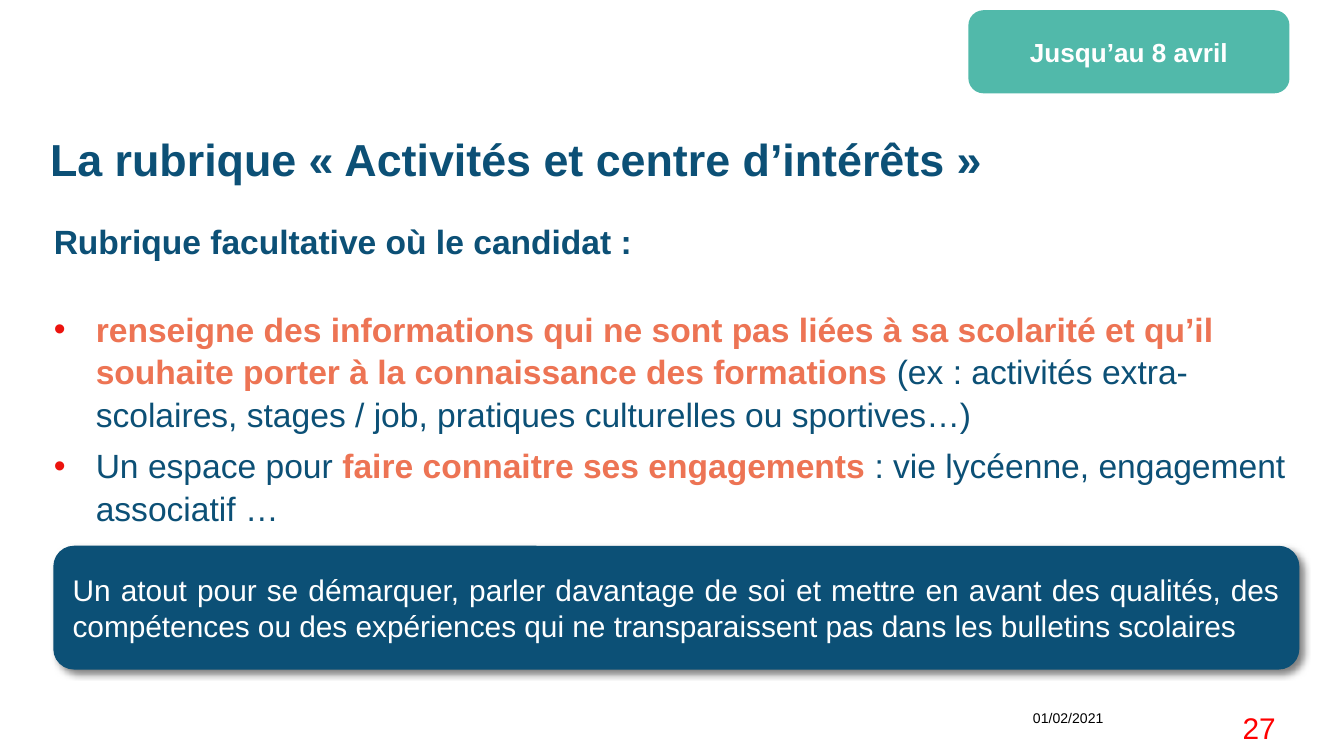
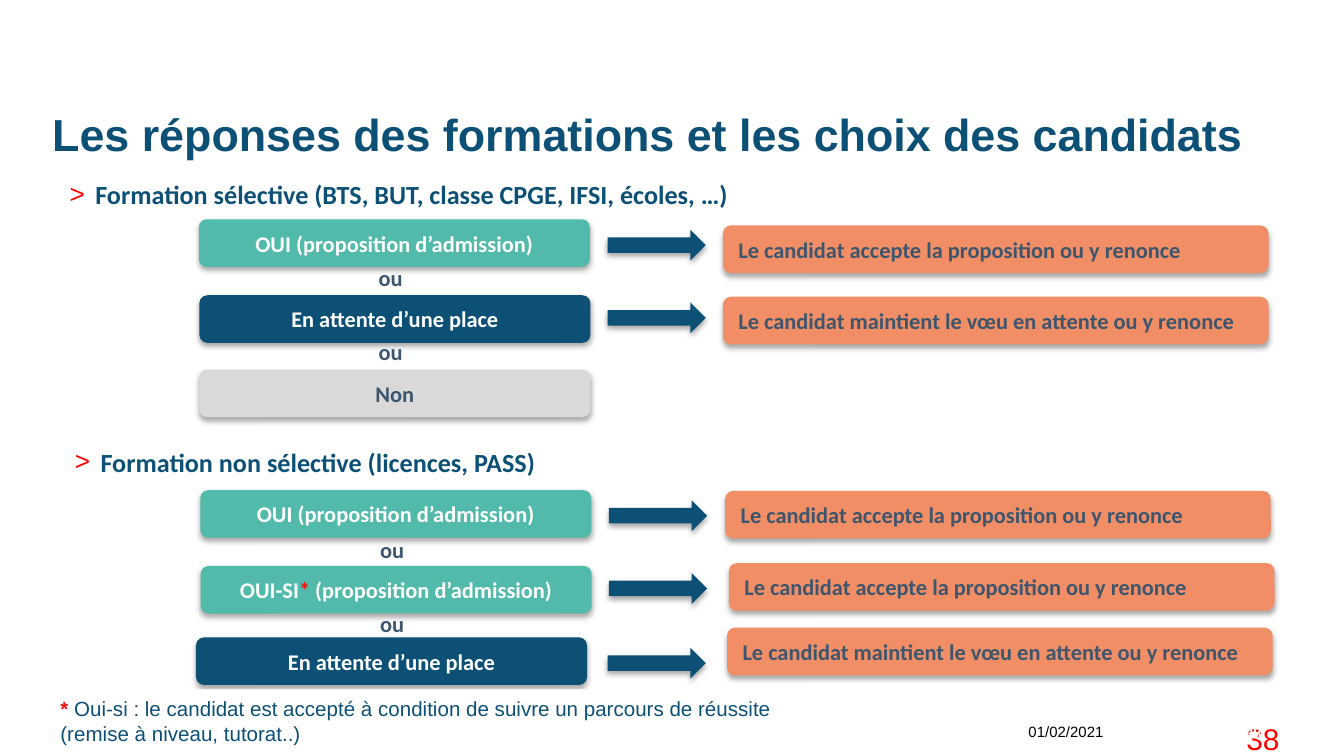
from dataclasses import dataclass, field
from typing import NamedTuple, Optional

from lxml.etree import SubElement
from pptx import Presentation
from pptx.dml.color import RGBColor
from pptx.enum.shapes import MSO_SHAPE
from pptx.enum.text import MSO_ANCHOR, PP_ALIGN
from pptx.oxml.ns import qn
from pptx.util import Pt

COLORS = {
    "navy": "0C5076", "teal": "51BAAA", "badge": "51B9AA", "coral": "ED7454",
    "orange": "F28E65", "grey": "D9D9D9", "slate": "3D566E", "star": "EC130E",
    "red": "FF0000", "black": "000000", "white": "FFFFFF",
}
ROUND, ARROW = MSO_SHAPE.ROUNDED_RECTANGLE, MSO_SHAPE.RIGHT_ARROW
LEFT, CENTER, RIGHT = PP_ALIGN.LEFT, PP_ALIGN.CENTER, PP_ALIGN.RIGHT
TOP, MIDDLE = MSO_ANCHOR.TOP, MSO_ANCHOR.MIDDLE
DATE = "01/02/2021"


class Box(NamedTuple):
    left: float
    top: float
    width: float
    height: float


class Shade(NamedTuple):
    alpha: int
    blur: float
    dist: float
    angle: int


class Run(NamedTuple):
    text: str
    color: str
    bold: bool = False


class Mark(NamedTuple):
    char: str
    color: str
    indent: float


@dataclass
class Para:
    runs: list[Run]
    align: PP_ALIGN = LEFT
    after: float = 0
    lines: float = 1.0
    mark: Optional[Mark] = None


@dataclass
class Part:
    box: Box
    paras: list[Para] = field(default_factory=list)
    size: float = 12
    face: str = "Arial"
    form: Optional[MSO_SHAPE] = None
    fill: str = "white"
    line: Optional[str] = None
    shade: Optional[Shade] = None
    anchor: MSO_ANCHOR = TOP
    inset: bool = True


CARD = Shade(50, 4, 3, 45)
SOFT = Shade(35, 3.1, 1.8, 90)


# Formatting helpers
def rgb(name: str) -> RGBColor:
    return RGBColor.from_string(COLORS[name])


def apply(target, values: dict) -> None:
    for key, value in values.items():
        setattr(target, key, value)


def cast(shape, shade: Shade) -> None:
    effects = shape._element.spPr.find(qn("a:effectLst"))
    outer = SubElement(effects, qn("a:outerShdw"), blurRad=str(Pt(shade.blur)),
                       dist=str(Pt(shade.dist)), dir=str(shade.angle * 60000),
                       algn="tl", rotWithShape="0")
    color = SubElement(outer, qn("a:srgbClr"), val=COLORS["black"])
    SubElement(color, qn("a:alpha"), val=str(shade.alpha * 1000))


def bullet(para, mark: Mark) -> None:
    props = para._p.get_or_add_pPr()
    props.set("marL", str(Pt(mark.indent)))
    props.set("indent", str(-Pt(mark.indent)))
    color = SubElement(props, qn("a:buClr"))
    SubElement(color, qn("a:srgbClr"), val=COLORS[mark.color])
    SubElement(props, qn("a:buFont"), typeface="Arial")
    SubElement(props, qn("a:buChar"), char=mark.char)


def write(frame, part: Part) -> None:
    apply(frame, {"word_wrap": True, "vertical_anchor": part.anchor})
    if not part.inset:
        apply(frame, dict.fromkeys(
            ("margin_left", "margin_top", "margin_right", "margin_bottom"), 0))
    for index, item in enumerate(part.paras):
        para = frame.add_paragraph() if index else frame.paragraphs[0]
        if item.mark:
            bullet(para, item.mark)
        apply(para, {"alignment": item.align, "space_after": Pt(item.after),
                     "line_spacing": item.lines})
        for piece in item.runs:
            run = para.add_run()
            run.text = piece.text
            apply(run.font, {"name": part.face, "size": Pt(part.size),
                             "bold": piece.bold})
            run.font.color.rgb = rgb(piece.color)


def draw(slide, part: Part) -> None:
    place = [Pt(value) for value in part.box]
    if part.form is None:
        shape = slide.shapes.add_textbox(*place)
    else:
        shape = slide.shapes.add_shape(part.form, *place)
        shape.shadow.inherit = False
        shape.fill.solid()
        shape.fill.fore_color.rgb = rgb(part.fill)
        if part.line:
            shape.line.color.rgb = rgb(part.line)
            shape.line.width = Pt(2)
        else:
            shape.line.fill.background()
        if part.shade:
            cast(shape, part.shade)
    if part.paras:
        write(shape.text_frame, part)


# Shared parts
def title(text: str, box: Box) -> Part:
    return Part(box, [Para([Run(text, "navy", True)], lines=0.9)], 24, inset=False)


def foot(text: str, left: float, top: float, size: float, color: str) -> Part:
    return Part(Box(left, top, 92, 28), [Para([Run(text, color)], RIGHT)], size)


# Parts of the answers slide
def head(text: str, left: float, top: float) -> Part:
    mark = Mark(">", "red", 13.7)
    return Part(Box(left, top, 642, 37),
                [Para([Run(text, "navy", True)], mark=mark)], 14, "Calibri")


def label(box: Box, runs: list[Run], fill: str, align: PP_ALIGN) -> Part:
    return Part(box, [Para(runs, align)], face="Calibri", form=ROUND,
                fill=fill, shade=SOFT, anchor=MIDDLE)


def reply(left: float, top: float, runs: list[Run], fill: str) -> Part:
    return label(Box(left, top, 209.5, 25.5), runs, fill, CENTER)


def choice(left: float, top: float, text: str) -> Part:
    return label(Box(left, top, 292.3, 25.5), [Run(text, "slate", True)],
                 "orange", LEFT)


def arrow(left: float, top: float) -> Part:
    return Part(Box(left, top, 52.6, 16.6), form=ARROW, fill="navy", shade=SOFT)


def either(left: float, top: float) -> Part:
    return Part(Box(left, top, 55.4, 21.6),
                [Para([Run("ou", "slate", True)])], face="Calibri")


def hobby() -> list[Part]:
    dot = Mark("•", "star", 22.5)
    body = [
        Para([Run("Rubrique facultative où le candidat :", "navy", True)],
             after=24.4, lines=1.05),
        Para([Run("renseigne des informations qui ne sont pas liées à sa scolarité "
                  "et qu’il souhaite porter à la connaissance des formations ",
                  "coral", True),
              Run("(ex : activités extra-scolaires, stages / job, pratiques "
                  "culturelles ou sportives…)", "navy")],
             after=5, lines=1.05, mark=dot),
        Para([Run("Un espace pour ", "navy"),
              Run("faire connaitre ses engagements ", "coral", True),
              Run(": vie lycéenne, engagement associatif …", "navy")],
             after=5, lines=1.05, mark=dot),
    ]
    asset = ("Un atout pour se démarquer, parler davantage de soi et mettre en avant "
             "des qualités, des compétences ou des expériences qui ne transparaissent "
             "pas dans les bulletins scolaires")
    return [
        title("La rubrique « Activités et centre d’intérêts »", Box(26.8, 74, 663, 57)),
        Part(Box(28.8, 117.4, 663, 253), body, 18, inset=False),
        foot(DATE, 506.3, 376.6, 7.5, "black"),
        foot("27", 598.5, 376.6, 16, "red"),
        Part(Box(28.6, 292.4, 667.5, 66.3),
             [Para([Run(asset, "white")], PP_ALIGN.JUSTIFY)], 16,
             form=ROUND, fill="navy", shade=CARD, anchor=MIDDLE),
        Part(Box(519.8, 6.5, 170, 42.5),
             [Para([Run("Jusqu’au 8 avril", "white", True)], CENTER)], 14,
             form=ROUND, fill="badge", line="badge", anchor=MIDDLE),
    ]


def answers() -> list[Part]:
    yes = [Run("OUI (proposition d’admission)", "white", True)]
    yes_if = [Run("OUI-SI", "white", True), Run("*", "star", True),
              Run(" (proposition d’admission)", "white", True)]
    wait = [Run("En attente d’une place", "white", True)]
    no = [Run("Non", "slate", True)]
    accept = "Le candidat accepte la proposition ou y renonce"
    keep = "Le candidat maintient le vœu en attente ou y renonce"
    parts = [
        foot(DATE, 506.3, 383.8, 8, "black"),
        foot("38", 600.5, 382.3, 16, "red"),
        Part(Box(656.6, 382.3, 29.5, 21),
             [Para([Run("38", "white", True)], CENTER)], 9, "Calibri", anchor=MIDDLE),
        head("Formation sélective (BTS, BUT, classe CPGE, IFSI, écoles, …)", 30.3, 92),
        head("Formation non sélective (licences, PASS)", 33.1, 235.4),
    ]
    # Replies, then "ou" links, arrows and choices
    parts += [reply(*row) for row in (
        (106.5, 117.5, yes, "teal"), (106.8, 158.2, wait, "navy"),
        (106.8, 198, no, "grey"), (107.3, 262.6, yes, "teal"),
        (107.5, 303.2, yes_if, "teal"), (105, 341.5, wait, "navy"))]
    parts += [either(*spot) for spot in (
        (195.8, 138.2), (195.8, 177.8), (196.6, 283.7), (196.6, 323.3))]
    parts += [arrow(*spot) for spot in (
        (325.5, 123), (325.5, 162), (326.2, 268), (326.2, 307), (325.5, 347))]
    parts += [choice(*row) for row in (
        (387.3, 120.8, accept), (387.3, 159, keep), (388.5, 263, accept),
        (390.5, 301.7, accept), (389.5, 336.3, keep))]
    # Footnote and title
    note = [
        Para([Run("*", "star", True),
              Run(" Oui-si : le candidat est accepté à condition de suivre un "
                  "parcours de réussite", "navy")]),
        Para([Run("(remise à niveau, tutorat..)", "navy")]),
    ]
    parts += [
        Part(Box(25.3, 369.4, 448, 33.8), note, 11, form=MSO_SHAPE.RECTANGLE),
        title("Les réponses des formations et les choix des candidats",
              Box(28, 60.5, 692, 35.3)),
    ]
    return parts


def main() -> None:
    deck = Presentation()
    apply(deck, {"slide_width": Pt(720), "slide_height": Pt(405)})
    for parts in (hobby(), answers()):
        slide = deck.slides.add_slide(deck.slide_layouts[6])
        for part in parts:
            draw(slide, part)
    deck.save("out.pptx")


if __name__ == "__main__":
    main()
